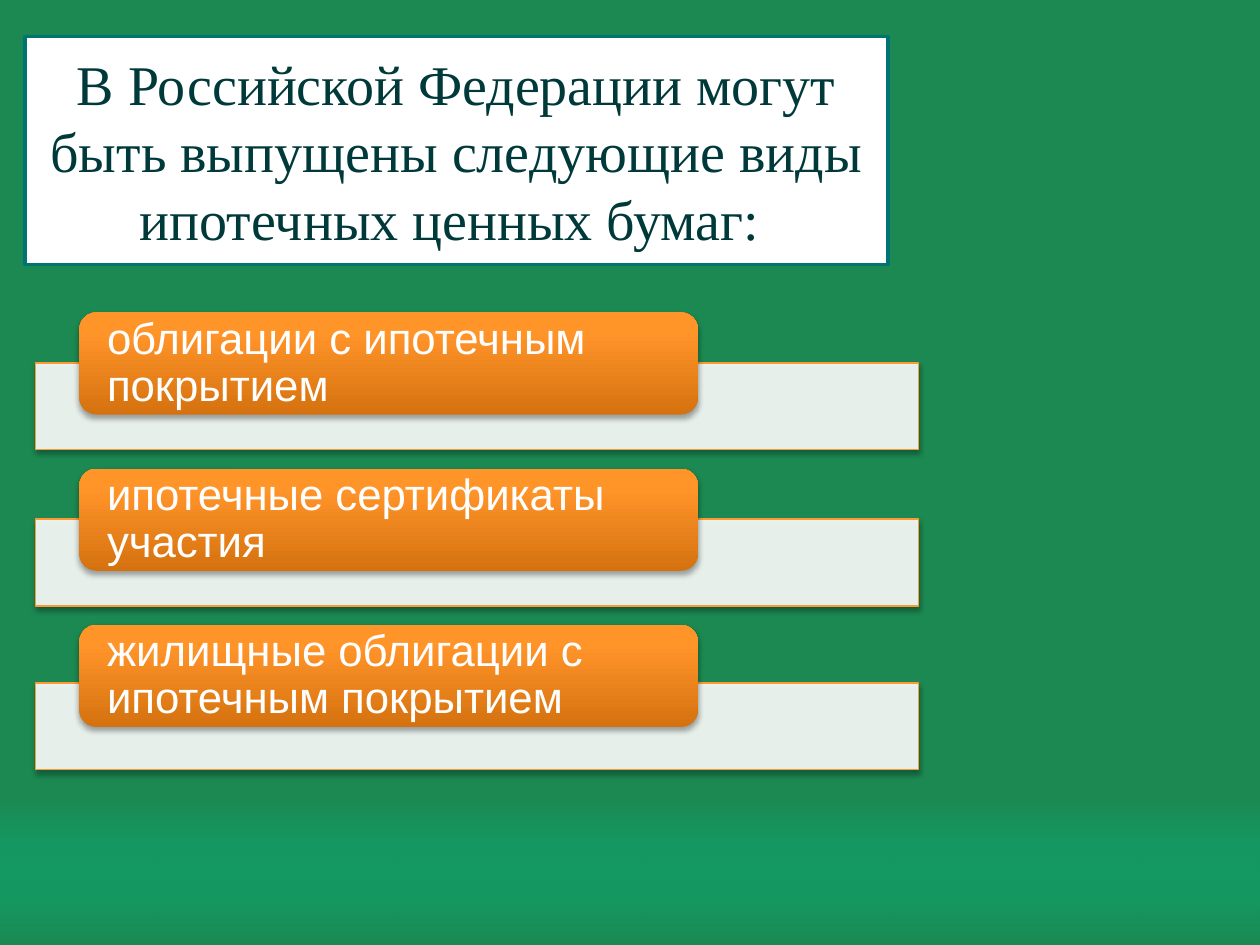
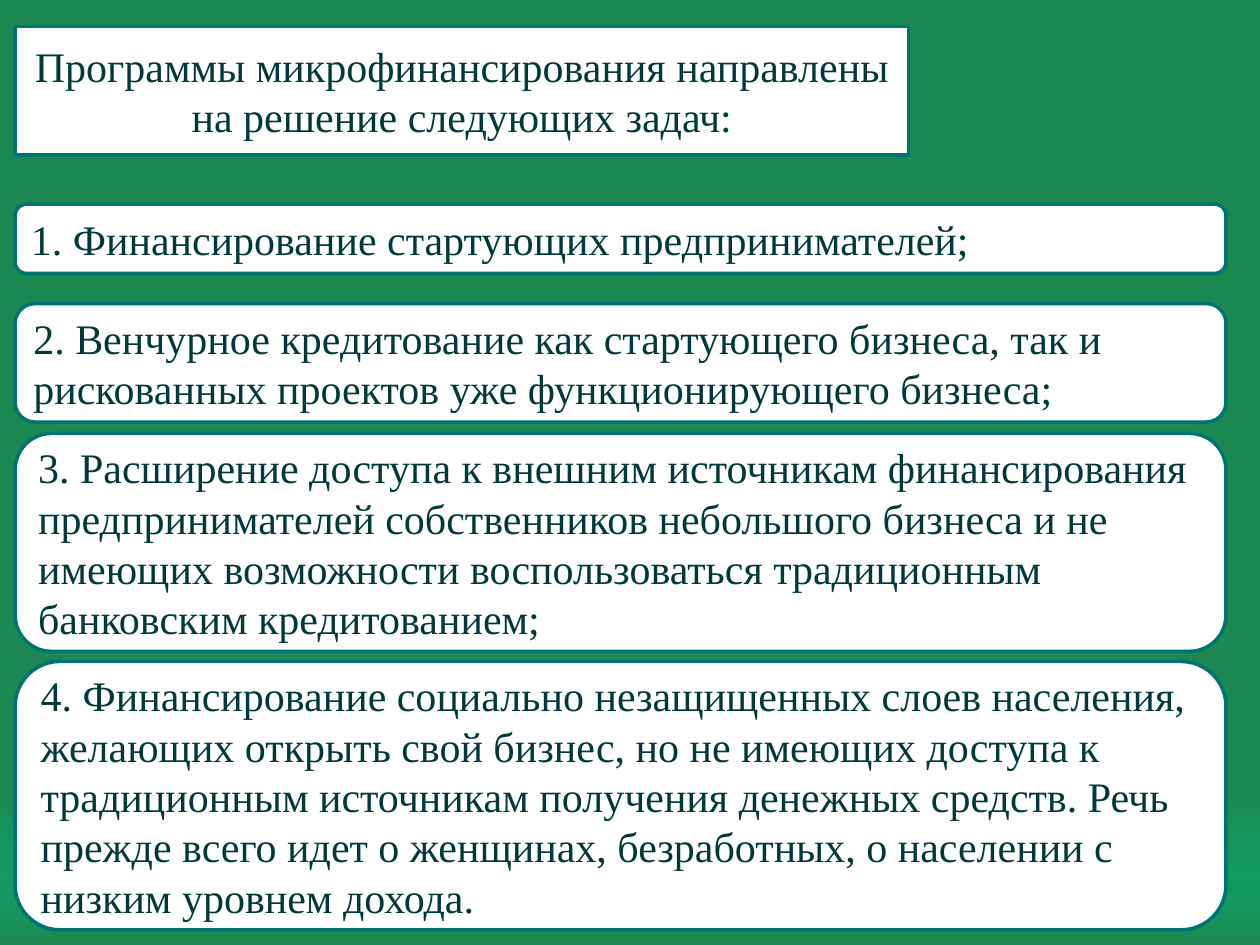
from lxml import etree
from pptx import Presentation
from pptx.dml.color import RGBColor as RGB
from pptx.enum.shapes import MSO_SHAPE as Kind
from pptx.enum.text import MSO_ANCHOR as Anchor, MSO_AUTO_SIZE as Auto, PP_ALIGN as Align
from pptx.oxml import parse_xml
from pptx.oxml.ns import qn
from pptx.util import Inches, Pt

# Shared look
HUES = {"ground": "1C8952", "glow": "00CC99", "card": "FFFFFF", "edge": "007373",
        "ink": "00393A", "rim": "FF9933", "low": "D5720F", "mid": "FF9429",
        "top": "FF952B", "shade": "000000"}
NS = "http://schemas.openxmlformats.org/drawingml/2006/main"
SERIF = {"name": "Times New Roman", "bold": False}
SANS = {"name": "Arial", "size": Pt(25), "bold": False}

# Slide 1: pill text and the top of the bar behind it
KINDS = [("облигации с ипотечным покрытием", 2.88),
         ("ипотечные сертификаты участия", 4.12),
         ("жилищные облигации с ипотечным покрытием", 5.42)]

# Slide 2: top, height and text of each task
TASKS = [
    (1.62, 0.55, "Финансирование стартующих предпринимателей;"),
    (2.41, 0.94, "Венчурное кредитование как стартующего бизнеса, так и "
                 "рискованных проектов уже функционирующего бизнеса;"),
    (3.44, 1.73, "Расширение доступа к внешним источникам финансирования "
                 "предпринимателей собственников небольшого бизнеса и не имеющих "
                 "возможности воспользоваться традиционным банковским кредитованием;"),
    (5.25, 2.13, "Финансирование социально незащищенных слоев населения, желающих "
                 "открыть свой бизнес, но не имеющих доступа к традиционным источникам "
                 "получения денежных средств. Речь прежде всего идет о женщинах, "
                 "безработных, о населении с низким уровнем дохода."),
]


def hue(name):
    return RGB.from_string(HUES[name])


def place(shape, box):
    for side, size in zip(("left", "top", "width", "height"), box):
        setattr(shape, side, Inches(size))


def add_box(slide, kind, box):
    shape = slide.shapes.add_shape(kind, *map(Inches, box))
    shape.shadow.inherit = False
    return shape


def paint(shape, fill, line=None, width=2):
    shape.fill.solid()
    shape.fill.fore_color.rgb = hue(fill)
    if line:
        shape.line.color.rgb = hue(line)
        shape.line.width = Pt(width)
    else:
        shape.line.fill.background()


def tint(node, name, alpha):
    color = etree.SubElement(node, qn("a:srgbClr"), val=HUES[name])
    etree.SubElement(color, qn("a:alpha"), val=str(alpha * 1000))


def blend(shape, stops, angle):
    """Fill with a linear gradient; stops are (position, colour, alpha)."""
    shape.fill.background()
    shape.line.fill.background()
    grad = parse_xml(f'<a:gradFill xmlns:a="{NS}" rotWithShape="1"><a:gsLst/>'
                     f'<a:lin ang="{angle * 60000}" scaled="0"/></a:gradFill>')
    for pos, name, alpha in stops:
        tint(etree.SubElement(grad[0], qn("a:gs"), pos=str(pos * 1000)), name, alpha)
    props = shape.element.spPr
    props.replace(props.find(qn("a:noFill")), grad)


def cast(shape):
    """Give a soft shadow below the shape."""
    effects = shape.element.spPr.find(qn("a:effectLst"))
    drop = etree.SubElement(effects, qn("a:outerShdw"), blurRad=str(Pt(3.1)),
                            dist=str(Pt(1.8)), dir="5400000", rotWithShape="0")
    tint(drop, "shade", 35)


def write(shape, text, style, color, align=Align.LEFT):
    frame = shape.text_frame
    frame.word_wrap = True
    frame.auto_size = Auto.NONE
    frame.vertical_anchor = Anchor.MIDDLE
    frame.text = text
    para = frame.paragraphs[0]
    para.alignment = align
    for key, value in style.items():
        setattr(para.runs[0].font, key, value)
    para.runs[0].font.color.rgb = hue(color)


def set_title(slide, text, box, size, geom):
    title = slide.shapes.title
    place(title, box)
    title.element.spPr.append(parse_xml(
        f'<a:prstGeom xmlns:a="{NS}" prst="{geom}"><a:avLst/></a:prstGeom>'))
    paint(title, "card", "edge")
    write(title, text, {**SERIF, "size": Pt(size)}, "ink", Align.CENTER)


def add_bar(slide, top):
    bar = add_box(slide, Kind.RECTANGLE, (0.28, top, 7.01, 0.69))
    paint(bar, "card", "rim", 0.75)
    color = bar.element.spPr.find(qn("a:solidFill"))[0]
    etree.SubElement(color, qn("a:alpha"), val="90000")
    cast(bar)


def add_pill(slide, top, text):
    pill = add_box(slide, Kind.ROUNDED_RECTANGLE, (0.63, top, 4.91, 0.81))
    blend(pill, [(0, "low", 100), (80, "mid", 100), (100, "top", 100)], 270)
    cast(pill)
    write(pill, text, SANS, "card")
    frame = pill.text_frame
    for side, gap in {"left": 0.18, "right": 0.18, "top": 0, "bottom": 0}.items():
        setattr(frame, f"margin_{side}", Inches(gap))
    frame.paragraphs[0].line_spacing = 0.9


def add_task(slide, top, height, text):
    card = add_box(slide, Kind.FLOWCHART_ALTERNATE_PROCESS, (0.12, top, 9.61, height))
    paint(card, "card", "edge")
    write(card, text, {**SERIF, "size": Pt(24)}, "ink")


def set_master(master, slide):
    """Green ground, and a glowing band along the bottom, behind every slide."""
    master.background.fill.solid()
    master.background.fill.fore_color.rgb = hue("ground")
    band = add_box(slide, Kind.RECTANGLE, (0, 6.35, 10, 1.15))
    blend(band, [(0, "glow", 0), (100, "ground", 100)], 90)
    master.shapes.element.insert(2, band.element)


def main():
    deck = Presentation()
    deck.slide_width, deck.slide_height = Inches(10), Inches(7.5)
    layout = deck.slide_layouts[5]
    bonds, loans = (deck.slides.add_slide(layout) for _ in range(2))
    set_master(deck.slide_master, bonds)

    # Kinds of mortgage securities
    set_title(bonds, "В Российской Федерации могут быть выпущены следующие виды "
              "ипотечных ценных бумаг: ", (0.2, 0.29, 6.85, 1.81), 32, "roundRect")
    for row, (text, top) in enumerate(KINDS):
        add_bar(bonds, top)
        add_pill(bonds, 2.48 + 1.24 * row, text)

    # Tasks of microfinance
    set_title(loans, "Программы микрофинансирования направлены на решение следующих "
              "задач:", (0.12, 0.21, 7.09, 1.02), 24, "flowChartAlternateProcess")
    for number, (top, height, text) in enumerate(TASKS, 1):
        add_task(loans, top, height, f"{number}. {text}")

    deck.save("out.pptx")


if __name__ == "__main__":
    main()
